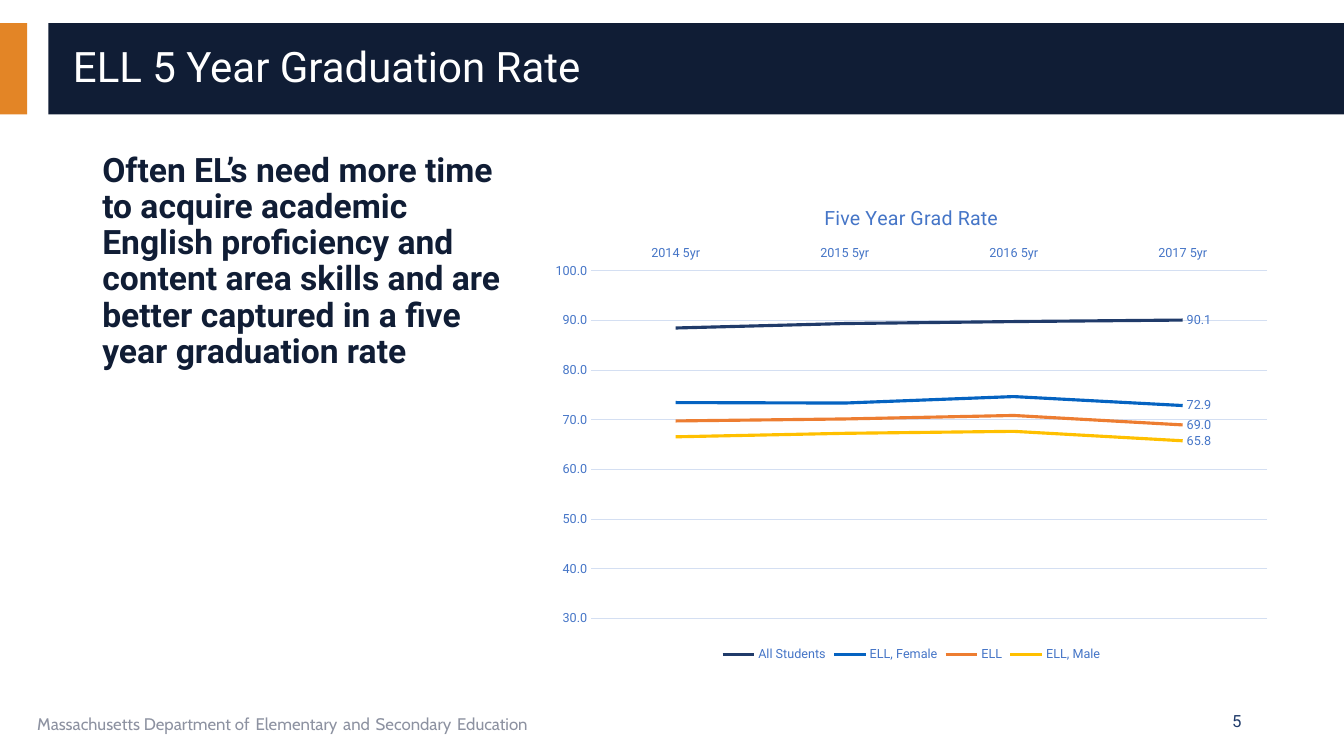
from pptx import Presentation
from pptx.chart.data import CategoryChartData
from pptx.dml.color import RGBColor
from pptx.enum.chart import XL_CHART_TYPE as ChartType
from pptx.enum.chart import XL_LABEL_POSITION as LabelPosition
from pptx.enum.chart import XL_LEGEND_POSITION as LegendPosition
from pptx.enum.chart import XL_MARKER_STYLE as MarkerStyle
from pptx.enum.chart import XL_TICK_LABEL_POSITION as TickLabelPosition
from pptx.enum.chart import XL_TICK_MARK as TickMark
from pptx.enum.shapes import MSO_SHAPE as ShapeKind
from pptx.enum.text import MSO_ANCHOR as Anchor
from pptx.enum.text import PP_ALIGN as Align
from pptx.util import Emu, Pt

PX = 9525
COLORS = {
    "orange": "E38526",
    "navy": "101D35",
    "blue": "203B6A",
    "gray": "8D92A1",
    "white": "FFFFFF",
    "label": "4575C7",
    "grid": "D4DFF2",
    "female": "0563C1",
    "ell": "ED7D31",
    "male": "FFC000",
}
YEARS = ["2014 5yr", "2015 5yr", "2016 5yr", "2017 5yr"]
RATES = [
    ("All Students", "blue", (88.5, 89.4, 89.8, 90.1)),
    ("ELL, Female", "female", (73.5, 73.4, 74.7, 72.9)),
    ("ELL", "ell", (69.8, 70.2, 70.9, 69.0)),
    ("ELL, Male", "male", (66.6, 67.3, 67.7, 65.8)),
]
MESSAGE = (
    "Often EL’s need more time to acquire academic English proficiency and "
    "content area skills and are better captured in a five year graduation rate"
)
FOOTER = ["Massachusetts Department of", "Elementary", "and", "Secondary", "Education"]


def color(name):
    return RGBColor.from_string(COLORS[name])


def place(*lengths):
    return [Emu(length * PX) for length in lengths]


def style_font(font, size, fill, name="Roboto", bold=False):
    font.size = Pt(size)
    font.name = name
    font.bold = bold
    font.color.rgb = color(fill)


def add_bar(page, area, fill):
    bar = page.shapes.add_shape(ShapeKind.RECTANGLE, *place(*area))
    bar.shadow.inherit = False
    bar.fill.solid()
    bar.fill.fore_color.rgb = color(fill)
    bar.line.fill.background()


def add_box(page, area, anchor=Anchor.MIDDLE):
    box = page.shapes.add_textbox(*place(*area))
    box.text_frame.word_wrap = True
    box.text_frame.vertical_anchor = anchor
    return box.text_frame.paragraphs[0]


def add_text(page, area, text, size, fill, anchor=Anchor.MIDDLE,
             bold=False, align=Align.LEFT, spacing=0.9):
    para = add_box(page, area, anchor)
    para.text = text
    para.alignment = align
    para.line_spacing = spacing
    style_font(para.font, size, fill, bold=bold)


def add_footer(page, area, words):
    para = add_box(page, area)
    for index, word in enumerate(words):
        if index:
            gap = para.add_run()
            gap.text = " "
            style_font(gap.font, 18, "blue", "Cabin")
        span = para.add_run()
        span.text = word
        style_font(span.font, 12, "gray", "Cabin")


def style_axis(axis):
    axis.major_tick_mark = TickMark.NONE
    axis.minor_tick_mark = TickMark.NONE
    style_font(axis.tick_labels.font, 9, "label")


def style_line(line, fill, width):
    line.color.rgb = color(fill)
    line.width = Pt(width)


def add_rate_chart(page, area, title):
    data = CategoryChartData(number_format="0.0")
    data.categories = YEARS
    for name, fill, rates in RATES:
        data.add_series(name, rates)
    chart = page.shapes.add_chart(ChartType.LINE, *place(*area), data).chart
    style_font(chart.font, 10, "blue")

    chart.has_title = True
    heading = chart.chart_title.text_frame.paragraphs[0]
    heading.text = title
    style_font(heading.font, 14, "label")
    chart.chart_title.include_in_layout = False

    chart.has_legend = True
    chart.legend.position = LegendPosition.BOTTOM
    chart.legend.include_in_layout = False
    style_font(chart.legend.font, 9, "label")

    years = chart.category_axis
    style_axis(years)
    years.tick_label_position = TickLabelPosition.HIGH
    style_line(years.format.line, "grid", 0.75)

    scale = chart.value_axis
    style_axis(scale)
    scale.minimum_scale, scale.maximum_scale, scale.major_unit = 30, 100, 10
    scale.tick_labels.number_format = "0.0"
    scale.tick_labels.number_format_is_linked = False
    scale.format.line.fill.background()
    style_line(scale.major_gridlines.format.line, "grid", 0.75)

    plot = chart.plots[0]
    plot.vary_by_categories = False
    for series, (name, fill, rates) in zip(plot.series, RATES):
        series.smooth = False
        series.marker.style = MarkerStyle.NONE
        style_line(series.format.line, fill, 2.25)
        label = series.points[len(rates) - 1].data_label
        style_font(label.font, 9, "label")
        label.position = LabelPosition.RIGHT


def main():
    deck = Presentation()
    deck.slide_width, deck.slide_height = place(1280, 720)
    page = deck.slides.add_slide(deck.slide_layouts[6])
    add_bar(page, (0, 22, 26, 87), "orange")
    add_bar(page, (46, 22, 1234, 87), "navy")
    add_footer(page, (26, 667, 810, 38), FOOTER)
    add_text(page, (904, 667, 288, 38), "5", 12, "blue", align=Align.RIGHT, spacing=1.0)
    add_text(page, (60, 37, 1194, 58), "ELL 5 Year Graduation Rate", 30, "white")
    add_text(page, (88, 141, 413, 132), MESSAGE, 24, "navy", Anchor.TOP, bold=True)
    add_rate_chart(page, (515, 177, 706, 457), "Five Year Grad Rate")
    deck.save("out.pptx")


if __name__ == "__main__":
    main()
